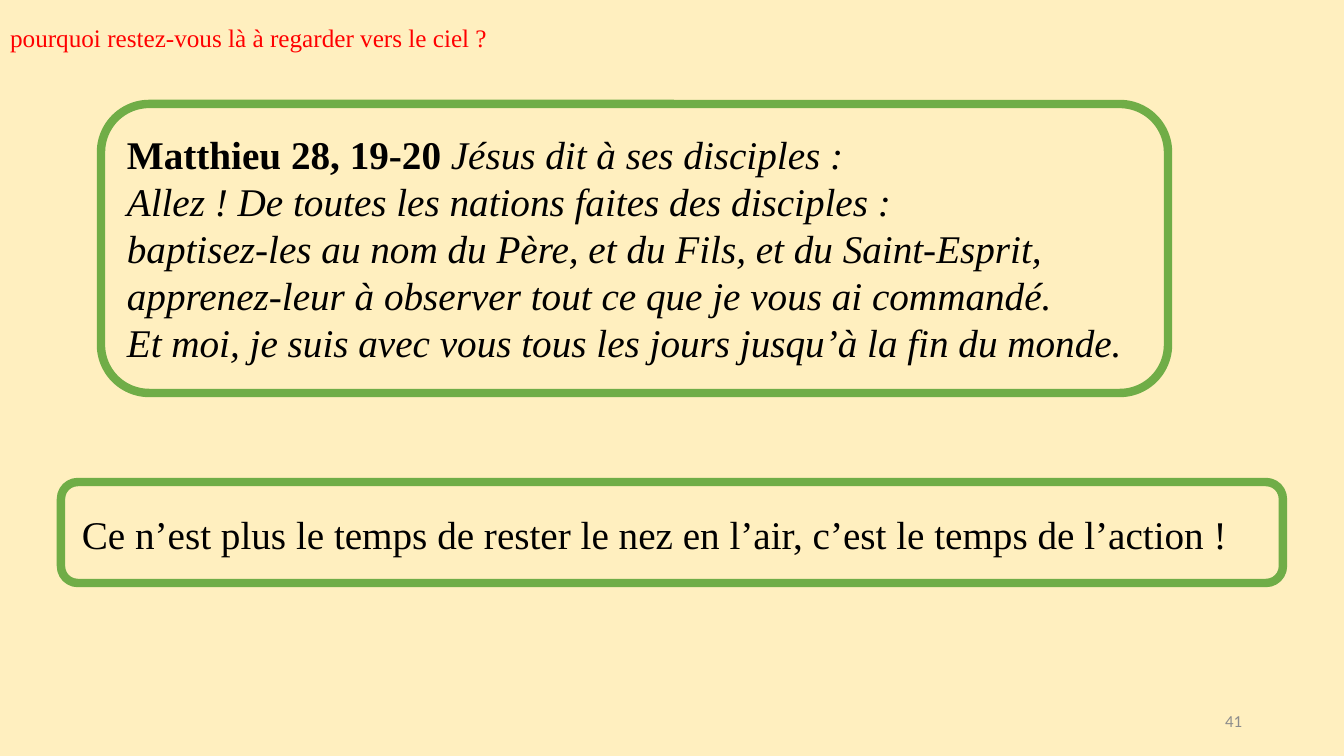
from pptx import Presentation
from pptx import util as u
from pptx.dml.color import RGBColor
from pptx.enum import shapes, text

PX = 914400 / 100.8
CREAM = RGBColor(0xFF, 0xEF, 0xBF)
RED = RGBColor(0xFF, 0x00, 0x00)
GREEN = RGBColor(0x70, 0xAD, 0x47)
BLACK = RGBColor(0x00, 0x00, 0x00)
GRAY = RGBColor(0x8C, 0x8C, 0x8C)
SERIF = "Times New Roman"

REFERENCE = "Matthieu 28, 19-20 "
VERSES = [
    [(REFERENCE, True, False), ("Jésus dit à ses disciples :", False, True)],
    [("Allez ! De toutes les nations faites des disciples :", False, True)],
    [("baptisez-les au nom du Père, et du Fils, et du Saint-Esprit, "
      "apprenez-leur à observer tout ce que je vous ai commandé.", False, True)],
    [("Et moi, je suis avec vous tous les jours jusqu’à la fin du monde.", False, True)],
]
CALL = [[("Ce n’est plus le temps de rester le nez en l’air, "
          "c’est le temps de l’action !", False, False)]]


def px(*lengths):
    return [u.Emu(round(length * PX)) for length in lengths]


def format_font(font, name, size, color):
    font.name = name
    font.size = u.Pt(size)
    font.color.rgb = color


def add_title(slide, box):
    title = slide.shapes.title
    title.left, title.top, title.width, title.height = px(*box)
    frame = title.text_frame
    frame.text = "pourquoi restez-vous là à regarder vers le ciel ?"
    frame.word_wrap = True
    frame.auto_size = text.MSO_AUTO_SIZE.NONE
    frame.vertical_anchor = text.MSO_ANCHOR.TOP
    paragraph = frame.paragraphs[0]
    paragraph.alignment = text.PP_ALIGN.LEFT
    format_font(paragraph.runs[0].font, SERIF, 18, RED)


def add_framed_text(slide, box, inset, lines):
    left, top, width, height = box
    across, down = inset
    group = slide.shapes.add_group_shape()
    border = group.shapes.add_shape(shapes.MSO_SHAPE.ROUNDED_RECTANGLE, *px(*box))
    border.shadow.inherit = False
    border.fill.background()
    border.line.color.rgb = GREEN
    border.line.width = u.Pt(6)

    textbox = group.shapes.add_textbox(
        *px(left + across, top + down, width - 2 * across, height - 2 * down))
    frame = textbox.text_frame
    frame.word_wrap = True
    for index, line in enumerate(lines):
        paragraph = frame.add_paragraph() if index else frame.paragraphs[0]
        for words, bold, italic in line:
            run = paragraph.add_run()
            run.text = words
            format_font(run.font, SERIF, 28, BLACK)
            run.font.bold = bold
            run.font.italic = italic


def add_slide_number(slide, box):
    frame = slide.shapes.add_textbox(*px(*box)).text_frame
    frame.word_wrap = True
    frame.vertical_anchor = text.MSO_ANCHOR.MIDDLE
    frame.text = "41"
    paragraph = frame.paragraphs[0]
    paragraph.alignment = text.PP_ALIGN.RIGHT
    format_font(paragraph.runs[0].font, "Calibri", 12, GRAY)


def main():
    presentation = Presentation()
    presentation.slide_width, presentation.slide_height = px(1344, 756)
    slide = presentation.slides.add_slide(presentation.slide_layouts[5])
    slide.background.fill.solid()
    slide.background.fill.fore_color.rgb = CREAM
    add_title(slide, (0, 17, 520, 40))
    add_framed_text(slide, (101, 104, 1067, 289), (16, 21), VERSES)
    add_framed_text(slide, (61, 482, 1222, 101), (11, 23), CALL)
    add_slide_number(slide, (950, 701, 302, 40))
    presentation.save("out.pptx")


if __name__ == "__main__":
    main()
